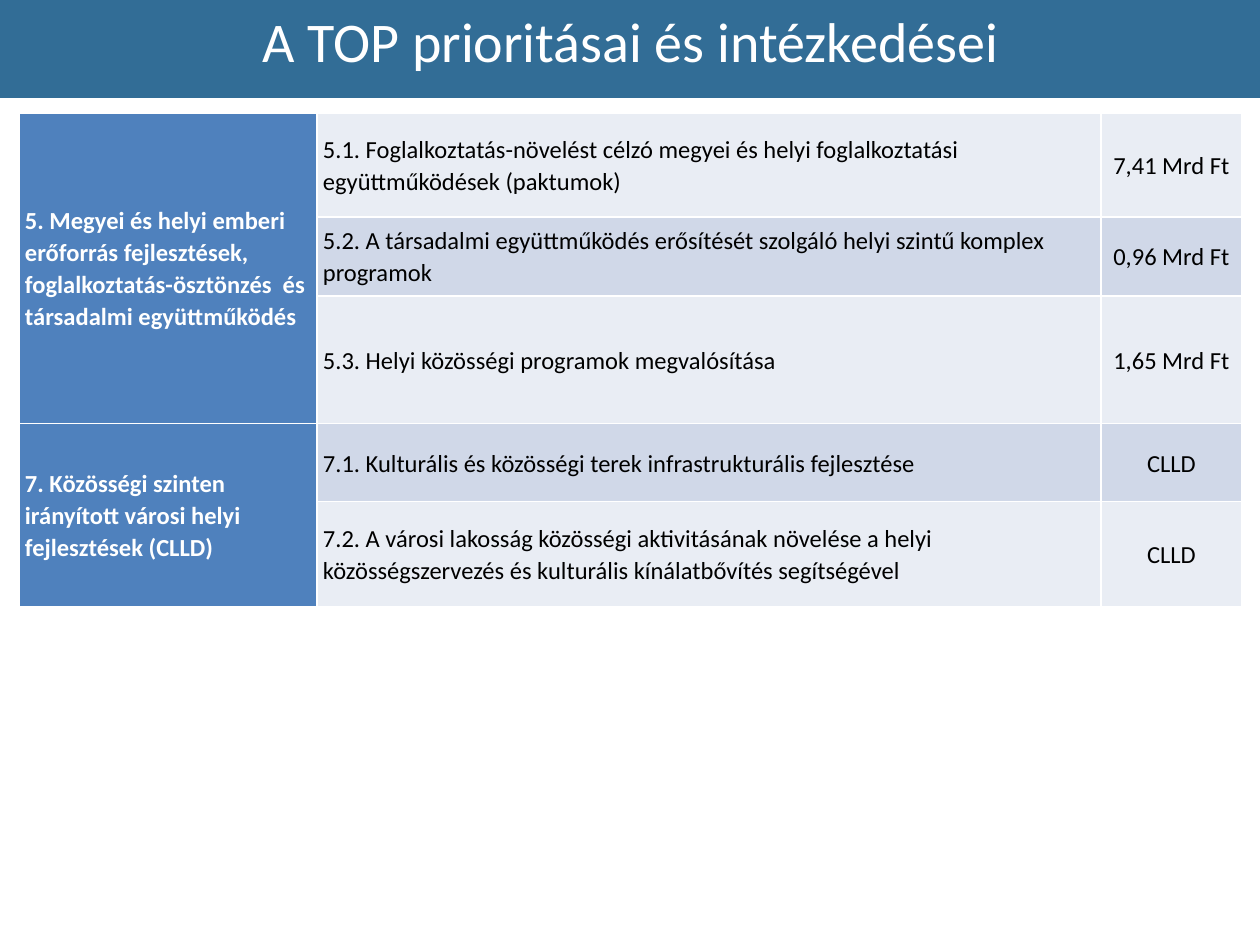
"""Build the slide on the priorities and measures of the TOP programme."""
from lxml.etree import SubElement
from pptx import Presentation
from pptx.dml.color import RGBColor
from pptx.enum.shapes import MSO_SHAPE as Shape
from pptx.enum.text import MSO_ANCHOR as Anchor, PP_ALIGN as Align
from pptx.oxml.ns import qn
from pptx.util import Pt

PX = 914400 // 126
COLORS = {
    "banner": "145887",
    "priority": "4F81BD",
    "light": "E9EDF4",
    "dark": "D0D8E8",
    "white": "FFFFFF",
    "black": "000000",
}
COLUMN_WIDTHS = [298, 784, 141]
ROW_HEIGHTS = [104, 79, 126, 78, 105]
PRIORITIES = [
    ("5. Megyei és helyi emberi erőforrás fejlesztések, foglalkoztatás-ösztönzés  és társadalmi együttműködés", [
        ("5.1. Foglalkoztatás-növelést célzó megyei és helyi foglalkoztatási együttműködések (paktumok)", "7,41 Mrd Ft"),
        ("5.2. A társadalmi együttműködés erősítését szolgáló helyi szintű komplex programok", "0,96 Mrd Ft"),
        ("5.3. Helyi közösségi programok megvalósítása", "1,65 Mrd Ft"),
    ]),
    ("7. Közösségi szinten irányított városi helyi fejlesztések (CLLD)", [
        ("7.1. Kulturális és közösségi terek infrastrukturális fejlesztése", "CLLD"),
        ("7.2. A városi lakosság közösségi aktivitásának növelése a helyi "
         "közösségszervezés és kulturális kínálatbővítés segítségével", "CLLD"),
    ]),
]


def write(frame, text, size=14, color="black", bold=False, align=Align.LEFT, spacing=1.07):
    frame.word_wrap = True
    paragraph = frame.paragraphs[0]
    paragraph.alignment = align
    paragraph.line_spacing = spacing
    run = paragraph.add_run()
    run.text = text
    run.font.name = "Calibri"
    run.font.size = Pt(size)
    run.font.bold = bold
    run.font.color.rgb = RGBColor.from_string(COLORS[color])


def style_cell(cell, fill):
    cell.margin_left = cell.margin_right = 6 * PX
    cell.margin_top = cell.margin_bottom = 0
    cell.vertical_anchor = Anchor.MIDDLE
    properties = cell._tc.get_or_add_tcPr()
    for side in ("a:lnL", "a:lnR", "a:lnT", "a:lnB"):
        border = SubElement(properties, qn(side), w=str(Pt(1)))
        solid = SubElement(border, qn("a:solidFill"))
        SubElement(solid, qn("a:srgbClr"), val=COLORS["white"])
    cell.fill.solid()
    cell.fill.fore_color.rgb = RGBColor.from_string(COLORS[fill])


deck = Presentation()
deck.slide_width, deck.slide_height = 1260 * PX, 945 * PX
slide = deck.slides.add_slide(deck.slide_layouts[5])

banner = slide.shapes.add_shape(Shape.RECTANGLE, 0, 0, 1260 * PX, 98 * PX)
banner.shadow.inherit = False
banner.line.fill.background()
banner.fill.solid()
banner.fill.fore_color.rgb = RGBColor.from_string(COLORS["banner"])
banner_color = banner._element.spPr.find(".//" + qn("a:srgbClr"))
SubElement(banner_color, qn("a:alpha"), val="87000")

title = slide.shapes.title
title.left, title.top, title.width, title.height = 168 * PX, 0, 926 * PX, 81 * PX
title.text_frame.vertical_anchor = Anchor.TOP
write(title.text_frame, "A TOP prioritásai és intézkedései", size=32, color="white",
      align=Align.CENTER, spacing=1.0)
banner._element.addnext(title._element)

measures_table = slide.shapes.add_table(
    len(ROW_HEIGHTS), len(COLUMN_WIDTHS), 19 * PX, 113 * PX,
    sum(COLUMN_WIDTHS) * PX, sum(ROW_HEIGHTS) * PX).table
measures_table.first_row = measures_table.horz_banding = False
for column, width in zip(measures_table.columns, COLUMN_WIDTHS):
    column.width = width * PX
for table_row, height in zip(measures_table.rows, ROW_HEIGHTS):
    table_row.height = height * PX

row = 0
for priority, measures in PRIORITIES:
    heading = measures_table.cell(row, 0)
    heading.merge(measures_table.cell(row + len(measures) - 1, 0))
    write(heading.text_frame, priority, color="white", bold=True)
    for measure, budget in measures:
        band = "dark" if row % 2 else "light"
        for column, fill in enumerate(("priority", band, band)):
            style_cell(measures_table.cell(row, column), fill)
        write(measures_table.cell(row, 1).text_frame, measure)
        write(measures_table.cell(row, 2).text_frame, budget, align=Align.CENTER)
        row += 1

deck.save("out.pptx")
